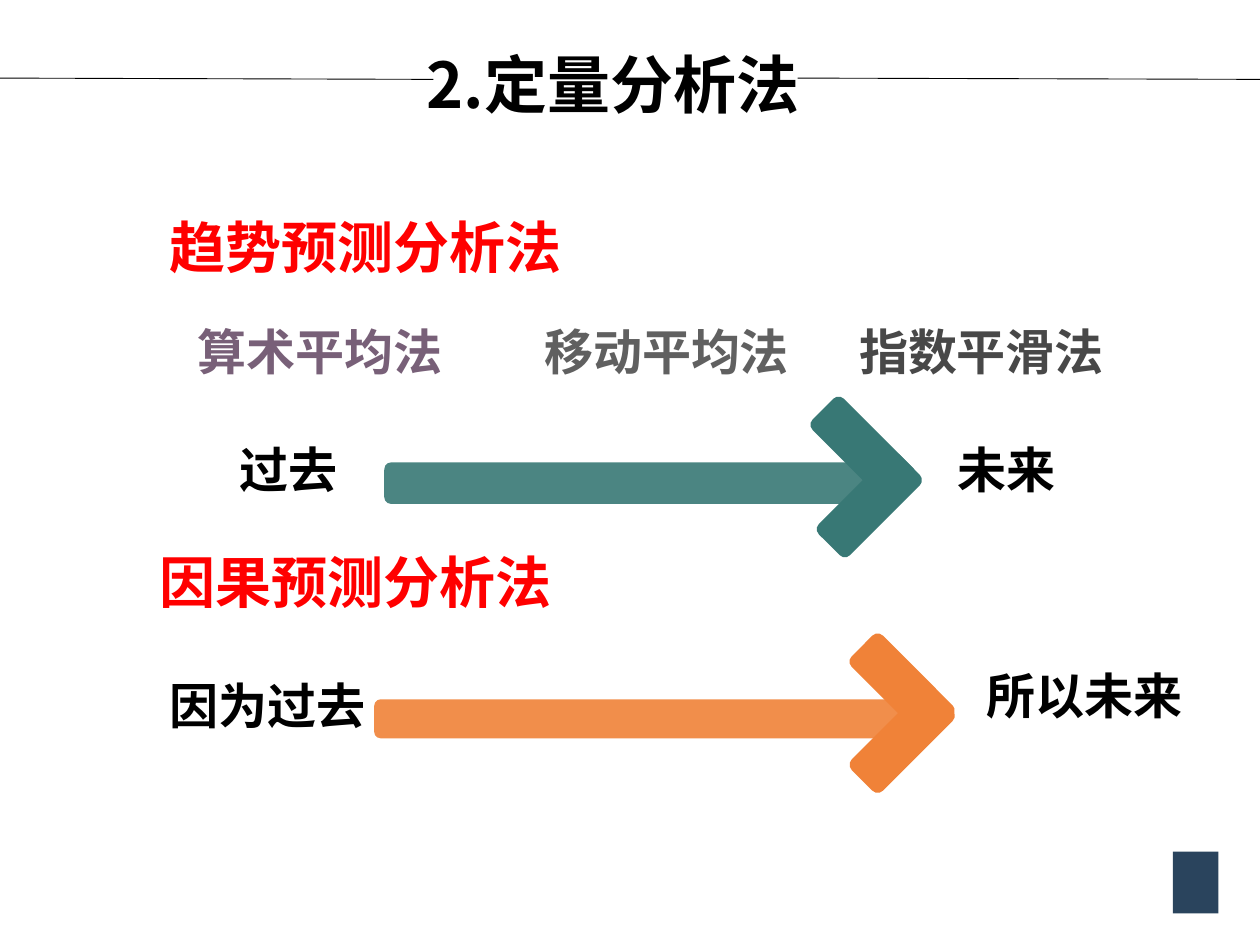
from lxml import etree
from pptx import Presentation
from pptx.dml.color import RGBColor
from pptx.enum.shapes import MSO_CONNECTOR, MSO_SHAPE
from pptx.enum.text import MSO_ANCHOR, MSO_AUTO_SIZE, PP_ALIGN
from pptx.oxml.ns import qn
from pptx.util import Inches, Pt

FONT = "Noto Sans CJK SC"
BLACK, RED, TEAL, ORANGE, NAVY = "000000", "FF0000", "387875", "F08238", "2A445D"
LEFT, CENTER, RIGHT = PP_ALIGN.LEFT, PP_ALIGN.CENTER, PP_ALIGN.RIGHT

TITLE = ("2.定量分析法", (2.73, 0.31, 4.27, 0.71))
# text, left, top, width, height, size, colour, alignment
HEADINGS = [
    ("趋势预测分析法", 1.25, 1.64, 3.52, 0.64, 32, RED, LEFT),
    ("因果预测分析法", 1.17, 4.3, 3.67, 0.64, 32, RED, LEFT),
]
METHODS = [
    ("算术平均法", 1.25, 2.5, 2.36, 0.57, 28, "786078", RIGHT),
    ("移动平均法", 4.06, 2.5, 2.3, 0.57, 28, "606060", RIGHT),
    ("指数平滑法", 6.72, 2.5, 2.21, 0.57, 28, "484848", LEFT),
]
ARROW_ENDS = [
    ("过去", 1.8, 3.44, 0.99, 0.57, 28, BLACK, LEFT),
    ("未来", 7.5, 3.44, 0.99, 0.57, 28, BLACK, LEFT),
    ("因为过去", 1.25, 5.31, 1.77, 0.57, 28, BLACK, LEFT),
    ("所以未来", 7.73, 5.23, 1.77, 0.57, 28, BLACK, LEFT),
]
# colour, shaft box, upper and lower arm corners
ARROWS = [
    (TEAL, (3.05, 3.67, 4.13, 0.33), (6.4, 3.39), (6.45, 3.83)),
    (ORANGE, (2.97, 5.55, 4.43, 0.31), (6.71, 5.27), (6.71, 5.7)),
]
ARM_SIZE = (0.9, 0.35)
RULES = [(0, 3.44), (6.33, 10)]


def rgb(colour):
    return RGBColor.from_string(colour)


def inches(*lengths):
    return [Inches(length) for length in lengths]


def set_text(frame, text, size, colour, align):
    frame.text = text
    para = frame.paragraphs[0]
    para.alignment = align
    para.font.name = FONT
    para.font.size = Pt(size)
    para.font.bold = True
    para.font.color.rgb = rgb(colour)
    # East Asian characters take their typeface from a:ea
    defaults = para._p.pPr.find(qn("a:defRPr"))
    etree.SubElement(defaults, qn("a:ea"), typeface=FONT)


def add_label(slide, text, left, top, width, height, size, colour, align, wrap=True):
    frame = slide.shapes.add_textbox(*inches(left, top, width, height)).text_frame
    frame.word_wrap = wrap
    frame.auto_size = MSO_AUTO_SIZE.SHAPE_TO_FIT_TEXT
    set_text(frame, text, size, colour, align)


def add_block(slide, kind, place, colour, rotation=0, opacity=100):
    block = slide.shapes.add_shape(kind, *inches(*place))
    block.shadow.inherit = False
    block.rotation = rotation
    block.fill.solid()
    block.fill.fore_color.rgb = rgb(colour)
    block.line.fill.background()
    if opacity < 100:
        fill_colour = block._element.spPr.find(qn("a:solidFill"))[0]
        etree.SubElement(fill_colour, qn("a:alpha"), val=str(opacity * 1000))


def add_arrow(slide, colour, shaft, upper, lower):
    rounded = MSO_SHAPE.ROUNDED_RECTANGLE
    add_block(slide, rounded, shaft, colour, opacity=90)
    for corner, rotation in ((upper, 45), (lower, 315)):
        add_block(slide, rounded, corner + ARM_SIZE, colour, rotation)


def add_rule(slide, start, end):
    rule = slide.shapes.add_connector(
        MSO_CONNECTOR.STRAIGHT, *inches(start, 0.62, end, 0.63))
    rule.line.color.rgb = rgb(BLACK)
    rule.line.width = Pt(0.5)
    etree.SubElement(rule._element.spPr, qn("a:effectLst"))


def set_title(slide):
    text, place = TITLE
    title = slide.shapes.title
    title.left, title.top, title.width, title.height = inches(*place)
    frame = title.text_frame
    frame.word_wrap = True
    frame.auto_size = MSO_AUTO_SIZE.SHAPE_TO_FIT_TEXT
    frame.vertical_anchor = MSO_ANCHOR.TOP
    set_text(frame, text, 36, BLACK, CENTER)


def main():
    deck = Presentation()
    deck.slide_width, deck.slide_height = inches(10, 7.5)
    slide = deck.slides.add_slide(deck.slide_layouts[5])
    set_title(slide)
    add_block(slide, MSO_SHAPE.RECTANGLE, (9.31, 6.76, 0.36, 0.49), NAVY)
    for rule in RULES:
        add_rule(slide, *rule)
    for arrow in ARROWS:
        add_arrow(slide, *arrow)
    for label in HEADINGS + METHODS:
        add_label(slide, *label)
    for label in ARROW_ENDS:
        add_label(slide, *label, wrap=False)
    deck.save("out.pptx")


if __name__ == "__main__":
    main()
